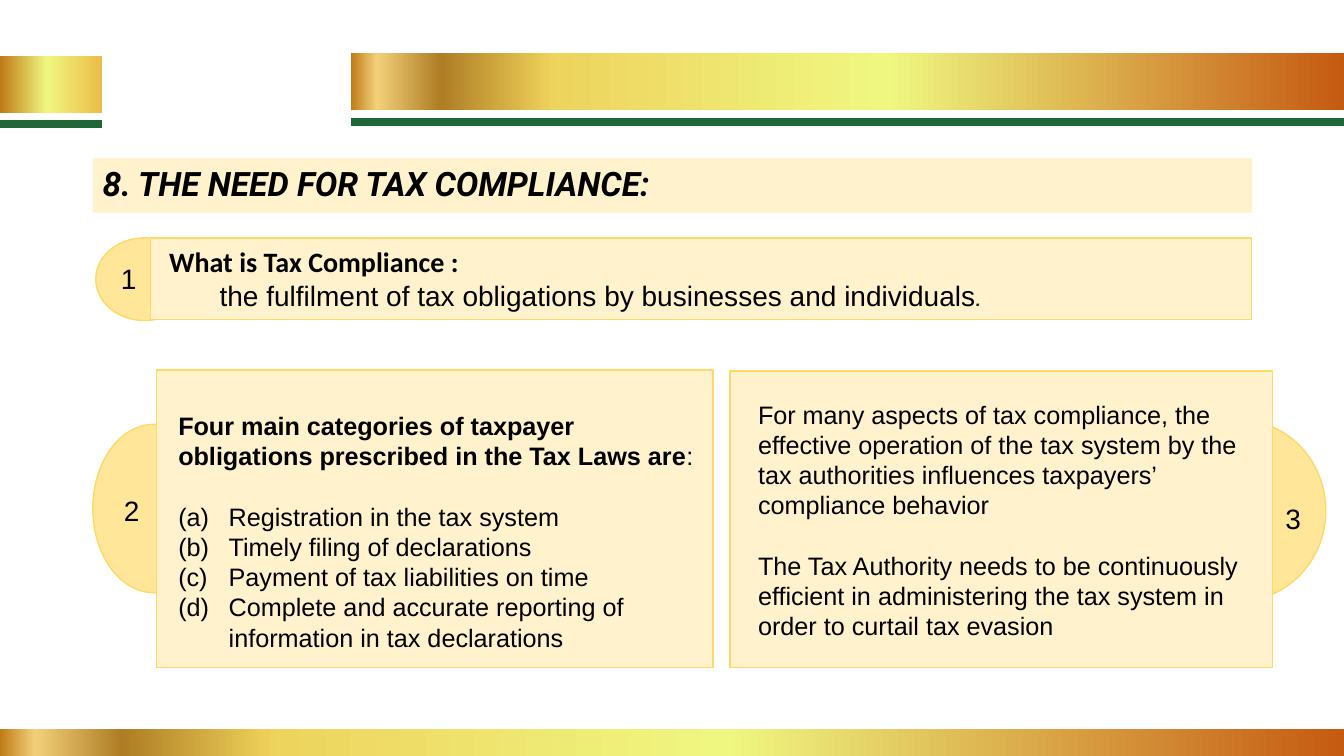
from lxml import etree
from pptx import Presentation
from pptx.dml.color import RGBColor
from pptx.enum import shapes, text
from pptx.oxml import ns
from pptx.util import Inches, Pt

COLOURS = {
    "black": "000000", "dark": "1F1F1F", "green": "216638",
    "cream": "FFF2CC", "sand": "FFE699", "edge": "FFD966",
}
GOLD_TO_RUST = [(0, "ECBD46"), (54, "EFF781"), (100, "C55A11")]
BRONZE_TO_GOLD = [(0, "BF7B17"), (13, "F2D07A"), (45, "AE7D24"), (99, "EDCF58")]
BRONZE_TO_AMBER = [(0, "BF7B17"), (46, "EFF781"), (100, "ECBD46")]
RECTANGLE = shapes.MSO_SHAPE.RECTANGLE
OVAL = shapes.MSO_SHAPE.OVAL


def rgb(name):
    return RGBColor.from_string(COLOURS[name])


def add_panel(slide, kind, place, fill, edge="edge"):
    panel = slide.shapes.add_shape(kind, *map(Inches, place))
    panel.shadow.inherit = False
    panel.fill.solid()
    panel.fill.fore_color.rgb = rgb(fill)
    if edge:
        panel.line.color.rgb = rgb(edge)
        panel.line.width = Pt(1)
    else:
        panel.line.fill.background()
    return panel


def add_gradient_bar(slide, place, stops):
    """Add a borderless bar whose colours run from left to right."""
    bar = slide.shapes.add_shape(RECTANGLE, *map(Inches, place))
    bar.shadow.inherit = False
    bar.line.fill.background()
    gradient = etree.Element(ns.qn("a:gradFill"), rotWithShape="1")
    stop_list = etree.SubElement(gradient, ns.qn("a:gsLst"))
    for percent, colour in stops:
        stop = etree.SubElement(stop_list, ns.qn("a:gs"), pos=str(percent * 1000))
        etree.SubElement(stop, ns.qn("a:srgbClr"), val=colour)
    etree.SubElement(gradient, ns.qn("a:lin"), ang="0", scaled="0")
    bar.element.spPr.find(ns.qn("a:prstGeom")).addnext(gradient)


def add_rule(slide, left, right, top):
    rule = slide.shapes.add_connector(
        shapes.MSO_CONNECTOR.STRAIGHT, *map(Inches, (left, top, right, top)))
    rule.line.color.rgb = rgb("green")
    rule.line.width = Pt(6)
    etree.SubElement(rule.element.spPr, ns.qn("a:effectLst"))


def add_text_frame(slide, place):
    box = slide.shapes.add_textbox(*map(Inches, place))
    box.text_frame.word_wrap = True
    return box.text_frame


def style(font, size, name="Arial", bold=False, colour="black"):
    font.size = Pt(size)
    font.name = name
    font.bold = bold
    font.color.rgb = rgb(colour)


def add_paragraph(frame, words, size=18, gap=0, lettered=False):
    para = frame.paragraphs[0] if not frame.text else frame.add_paragraph()
    para.add_run().text = words
    if lettered:
        properties = para._p.get_or_add_pPr()
        properties.set("marL", str(Inches(0.5)))
        properties.set("indent", str(-Inches(0.5)))
        etree.SubElement(properties, ns.qn("a:buFont"), typeface="+mj-lt")
        etree.SubElement(properties, ns.qn("a:buAutoNum"), type="alphaLcParenBoth")
    if gap:
        para.space_before = Pt(gap)
    style(para.font, size)
    return para


def add_bands(slide):
    add_rule(slide, 0, 1.01, 1.23)
    add_gradient_bar(slide, (0, 0.56, 1.01, 0.56), BRONZE_TO_AMBER)
    add_rule(slide, 3.48, 13.33, 1.21)
    for left, top, width, height, bronze_width in (
            (3.48, 0.53, 9.85, 0.56, 1.98), (0, 7.23, 13.33, 0.27, 2.68)):
        add_gradient_bar(slide, (left, top, width, height), GOLD_TO_RUST)
        add_gradient_bar(slide, (left, top, bronze_width, height), BRONZE_TO_GOLD)


def add_title(slide):
    title = add_panel(slide, RECTANGLE, (0.92, 1.57, 11.5, 0.54), "cream", edge=None)
    title.text_frame.vertical_anchor = text.MSO_ANCHOR.MIDDLE
    para = add_paragraph(title.text_frame, "8. THE NEED FOR TAX COMPLIANCE:")
    para.alignment = text.PP_ALIGN.LEFT
    para.line_spacing = 0.9
    style(para.font, 24, "Roboto", bold=True)
    para.font.italic = True


def add_definition(slide):
    frame = add_text_frame(slide, (1.58, 2.38, 9.87, 0.77))
    question = add_paragraph(frame, "What is Tax Compliance :")
    style(question.font, 20, "Calibri", bold=True)
    answer = add_paragraph(
        frame, "\tthe fulfilment of tax obligations by businesses and individuals", 20)
    stop = answer.add_run()
    stop.text = "."
    style(stop.font, 20, "Cabin", colour="dark")
    stop.font.italic = True


def add_obligations(slide):
    frame = add_text_frame(slide, (1.67, 4.02, 5.36, 2.79))
    heading = add_paragraph(
        frame, "Four main categories of taxpayer obligations prescribed in the Tax Laws are")
    heading.runs[0].font.bold = True
    heading.add_run().text = ":"
    obligations = (
        "Registration in the tax system",
        "Timely filing of declarations",
        "Payment of tax liabilities on time",
        "Complete and accurate reporting of information in tax declarations",
    )
    for index, obligation in enumerate(obligations):
        add_paragraph(frame, obligation, gap=0 if index else 21.6, lettered=True)


def add_authority_role(slide):
    frame = add_text_frame(slide, (7.42, 3.91, 5.04, 2.52))
    add_paragraph(
        frame, "For many aspects of tax compliance, the effective operation of the tax "
        "system by the tax authorities influences taxpayers’ compliance behavior")
    add_paragraph(
        frame, "The Tax Authority needs to be continuously efficient in administering "
        "the tax system in order to curtail tax evasion", gap=21.6)


def main():
    deck = Presentation()
    deck.slide_width, deck.slide_height = Inches(13.33), Inches(7.5)
    slide = deck.slides.add_slide(deck.slide_layouts[6])
    add_bands(slide)
    add_title(slide)
    for oval, panel in (
            ((0.92, 4.21, 1.21, 1.67), (1.55, 3.67, 5.52, 2.95)),
            ((11.45, 4.17, 1.7, 1.79), (7.24, 3.68, 5.38, 2.94)),
            ((0.95, 2.36, 0.97, 0.82), (1.49, 2.36, 10.92, 0.81))):
        add_panel(slide, OVAL, oval, "sand")
        add_panel(slide, RECTANGLE, panel, "cream")
    add_definition(slide)
    add_obligations(slide)
    add_authority_role(slide)
    for number, place in (("1", (1.1, 2.55, 0.47, 0.44)),
                          ("2", (1.13, 4.85, 0.33, 0.44)),
                          ("3", (12.65, 4.93, 0.38, 0.44))):
        add_paragraph(add_text_frame(slide, place), number, 20)
    deck.save("out.pptx")


if __name__ == "__main__":
    main()
